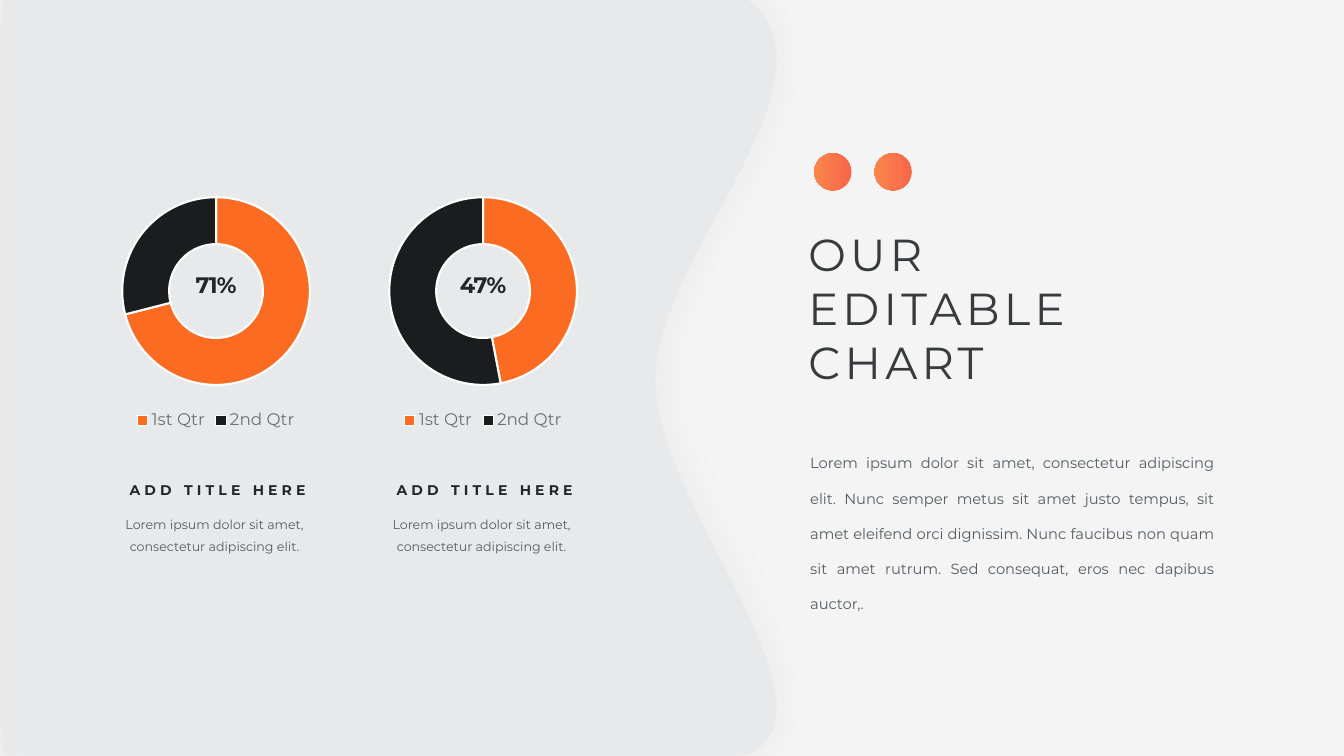
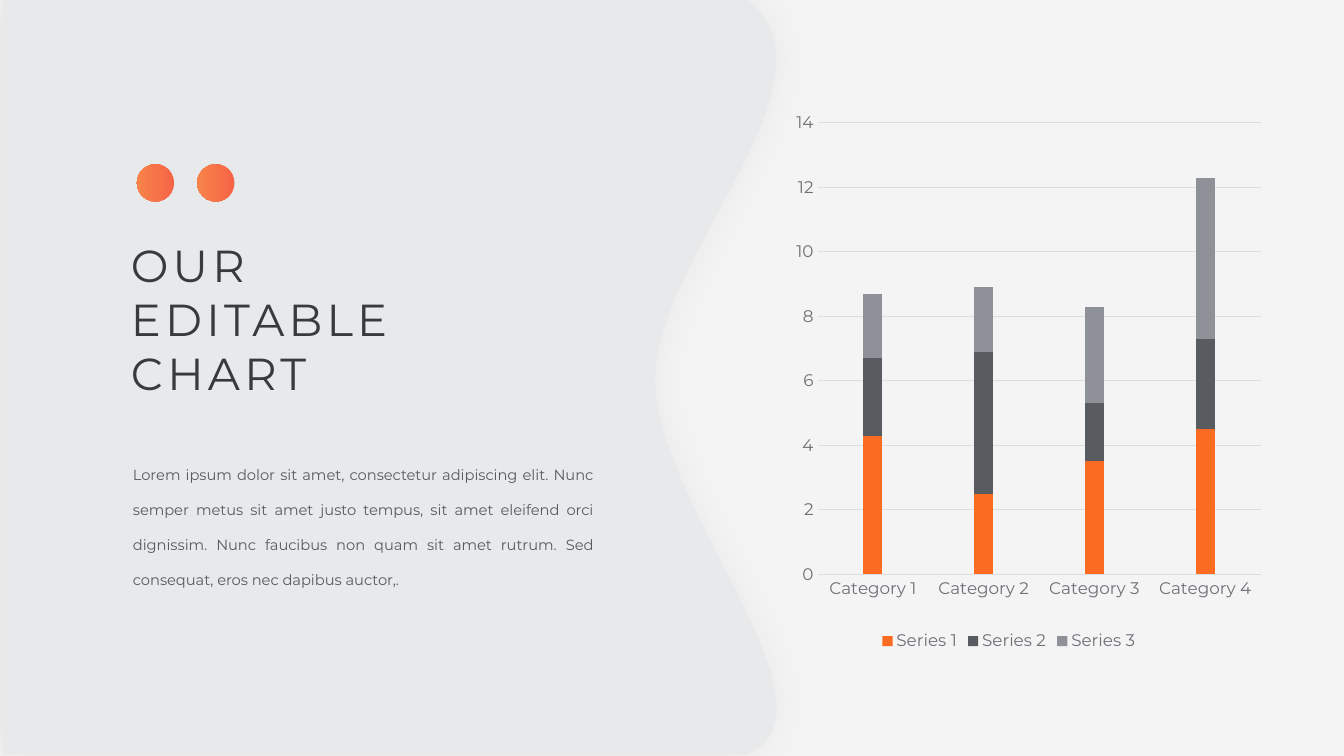
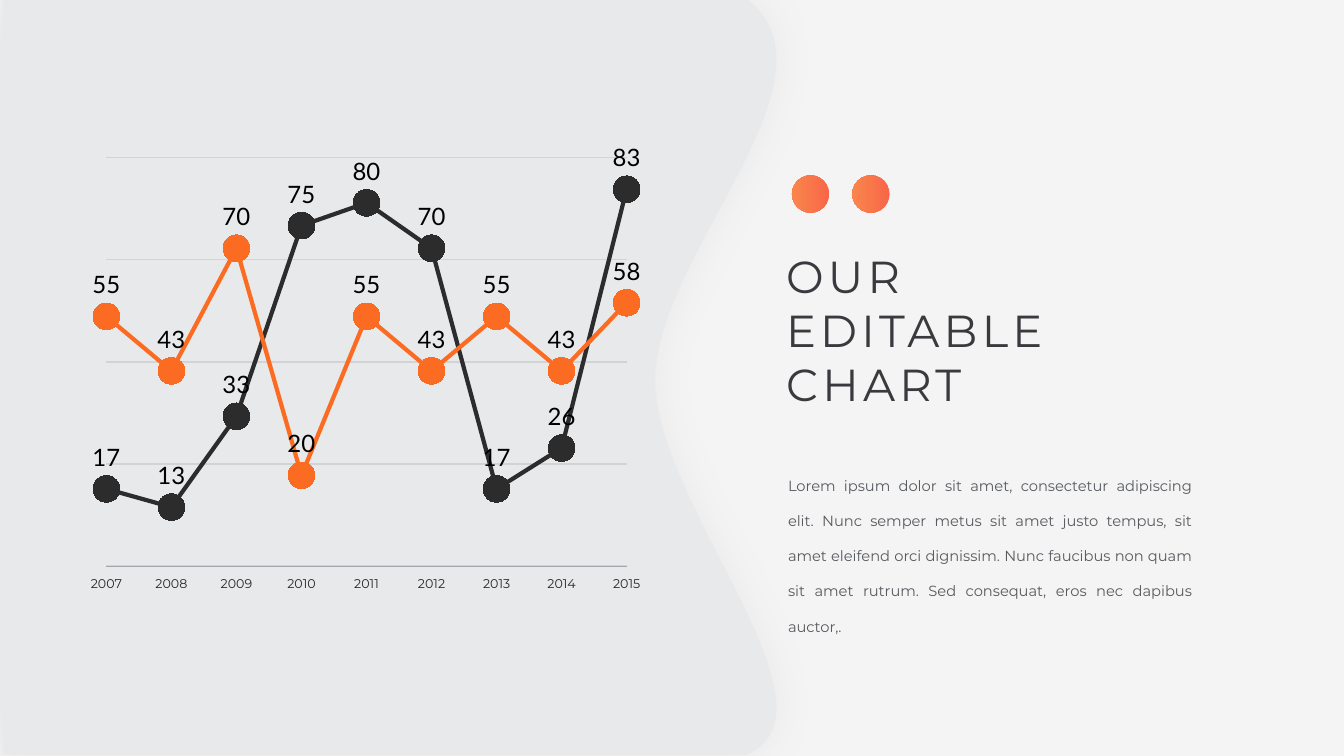
from lxml.etree import SubElement
from pptx import Presentation
from pptx.chart.data import CategoryChartData
from pptx.dml.color import RGBColor
from pptx.enum.chart import (
    XL_CHART_TYPE as ChartType,
    XL_LABEL_POSITION as LabelPosition,
    XL_LEGEND_POSITION as LegendPosition,
    XL_MARKER_STYLE as MarkerStyle,
    XL_TICK_LABEL_POSITION as TickLabelPosition,
    XL_TICK_MARK as TickMark,
)
from pptx.enum.shapes import MSO_SHAPE as Shape
from pptx.enum.text import MSO_AUTO_SIZE as AutoSize, PP_ALIGN as Align
from pptx.oxml.ns import qn
from pptx.util import Cm, Pt

COLORS = {
    "background": "F4F4F4", "wave": "E8E9EA", "shadow": "A7A7A7",
    "title": "393A3E", "body": "585B60", "dark": "242527",
    "label": "6D7076", "grid": "DDDEE0", "white": "FFFFFF",
    "orange": "FC6B22", "red": "FA431E", "black": "1B1C1D",
    "slate": "585B60", "grey": "8E9197", "charcoal": "2C2C2C",
    "line_grid": "D2D3D5", "line_axis": "A5A7AB", "value": "000000",
}
FONT = "Montserrat"

# Font, colour, paragraph format and letter spacing (hundredths of a point)
STYLES = {
    "title": (dict(size=Pt(32)), "title", {}, 300),
    "body": (dict(size=Pt(10.5)), "body",
             dict(alignment=Align.JUSTIFY, line_spacing=2.0), 0),
    "percent": (dict(size=Pt(16), bold=True), "dark",
                dict(alignment=Align.CENTER), -60),
    "heading": (dict(size=Pt(10), bold=True), "dark",
                dict(alignment=Align.CENTER), 300),
    "caption": (dict(size=Pt(9)), "body",
                dict(alignment=Align.CENTER, line_spacing=1.5), 0),
}

CAPTION = "Lorem ipsum dolor sit amet, consectetur adipiscing elit."
BODY = (CAPTION + " Nunc semper metus sit amet justo tempus, sit amet eleifend "
        "orci dignissim. Nunc faucibus non quam sit amet rutrum. Sed consequat, "
        "eros nec dapibus auctor,.")

WAVE_LEFT, WAVE_TOP, WAVE_BOTTOM = 0.08, -0.03, 19.02
WAVE_CURVES = [
    [(18.82, WAVE_TOP), (21.39, 1.98), (16.51, 6.4), (16.51, 9.58)],
    [(16.51, 9.58), (16.51, 12.75), (21.39, 17.86), (18.82, WAVE_BOTTOM)],
]
CURVE_STEPS = 40


def rgb(color):
    return RGBColor.from_string(COLORS[color])


def apply(target, values):
    for attribute, value in values.items():
        setattr(target, attribute, value)


def paint(fill, color):
    fill.solid()
    fill.fore_color.rgb = rgb(color)


def stroke(line, color, width):
    paint(line.fill, color)
    line.width = Pt(width)


def set_font(font, color, size, name=FONT):
    apply(font, dict(name=name, size=Pt(size)))
    font.color.rgb = rgb(color)


def bezier(points, t):
    weights = ((1 - t) ** 3, 3 * t * (1 - t) ** 2, 3 * t ** 2 * (1 - t), t ** 3)
    return tuple(sum(w * p[axis] for w, p in zip(weights, points)) for axis in (0, 1))


def add_wave(slide):
    edge = [bezier(curve, step / CURVE_STEPS)
            for curve in WAVE_CURVES for step in range(CURVE_STEPS + 1)]
    outline = edge + [(WAVE_LEFT, WAVE_BOTTOM)]
    builder = slide.shapes.build_freeform(Cm(WAVE_LEFT), Cm(WAVE_TOP))
    builder.add_line_segments([(Cm(x), Cm(y)) for x, y in outline], close=True)
    wave = builder.convert_to_shape()
    paint(wave.fill, "wave")
    wave.line.fill.background()
    wave.shadow.inherit = False
    effects = wave.element.spPr.find(qn("a:effectLst"))
    shadow = SubElement(effects, qn("a:outerShdw"), blurRad=str(Pt(33)),
                        dist=str(Pt(6)), dir="10800000", algn="r", rotWithShape="0")
    tint = SubElement(shadow, qn("a:srgbClr"), val=COLORS["shadow"])
    SubElement(tint, qn("a:alpha"), val="20000")


def add_text(slide, style, paragraphs, left, top, width, height, wrap=True):
    font, color, layout, spacing = STYLES[style]
    box = slide.shapes.add_textbox(Cm(left), Cm(top), Cm(width), Cm(height))
    apply(box.text_frame, dict(word_wrap=wrap, auto_size=AutoSize.SHAPE_TO_FIT_TEXT,
                               text="\n".join(paragraphs)))
    for paragraph in box.text_frame.paragraphs:
        apply(paragraph, layout)
        for run in paragraph.runs:
            apply(run.font, dict(font, name=FONT))
            run.font.color.rgb = rgb(color)
    for properties in box.element.iter(qn("a:rPr")):
        properties.set("spc", str(spacing))


def add_dot(slide, left, top):
    dot = slide.shapes.add_shape(Shape.OVAL, Cm(left), Cm(top), Cm(0.94), Cm(0.94))
    dot.shadow.inherit = False
    dot.line.fill.background()
    dot.fill.gradient()
    dot.fill.gradient_angle = 180
    for stop, color in zip(dot.fill.gradient_stops, ("red", "orange")):
        stop.color.rgb = rgb(color)
    for tint in dot.element.spPr.iter(qn("a:srgbClr")):
        SubElement(tint, qn("a:alpha"), val="80000")


def add_intro(slide, left, top, body_width):
    """Title with its two dots above and its paragraph below."""
    add_text(slide, "title", ["OUR", "EDITABLE CHART"], left, top, 11.73, 4.37)
    add_text(slide, "body", [BODY], left + 0.05, top + 5.29, body_width, 3.71)
    for index in range(2):
        add_dot(slide, left + 0.4 + index * 1.52, top - 1.73)


def add_chart(slide, kind, categories, series, left, top, width, height):
    data = CategoryChartData()
    data.categories = categories
    for number, values in enumerate(series, 1):
        data.add_series(f"Series {number}", values)
    chart = slide.shapes.add_chart(kind, Cm(left), Cm(top), Cm(width), Cm(height),
                                   data).chart
    apply(chart, dict(has_title=False, has_legend=False))
    set_font(chart.font, "dark", 10)
    return chart


def add_legend(chart):
    chart.has_legend = True
    apply(chart.legend, dict(position=LegendPosition.BOTTOM, include_in_layout=False))
    set_font(chart.legend.font, "label", 12)


def place_plot(chart, x, y, w, h):
    """Fix the inner plot area, in percent of the chart."""
    plot_area = chart.element.find(".//" + qn("c:plotArea"))
    for automatic in plot_area.findall(qn("c:layout")):
        plot_area.remove(automatic)
    layout = SubElement(plot_area, qn("c:layout"))
    plot_area.insert(0, layout)
    manual = SubElement(layout, qn("c:manualLayout"))
    settings = dict(layoutTarget="inner", xMode="edge", yMode="edge",
                    x=x / 100, y=y / 100, w=w / 100, h=h / 100)
    for tag, value in settings.items():
        SubElement(manual, qn("c:" + tag), val=str(value))


def style_axes(chart, axis_line, grid_line, label_color, label_size):
    ticks = dict(major_tick_mark=TickMark.NONE, minor_tick_mark=TickMark.NONE)
    for axis in (chart.category_axis, chart.value_axis):
        apply(axis, ticks)
        set_font(axis.tick_labels.font, label_color, label_size)
    stroke(chart.category_axis.format.line, *axis_line)
    chart.value_axis.format.line.fill.background()
    chart.value_axis.has_major_gridlines = True
    stroke(chart.value_axis.major_gridlines.format.line, *grid_line)


def start_on_axis(chart):
    """Put the first and last category on the edges of the plot area."""
    axis = chart.element.find(".//" + qn("c:valAx"))
    for crossing in axis.findall(qn("c:crossBetween")):
        axis.remove(crossing)
    crossing = SubElement(axis, qn("c:crossBetween"), val="midCat")
    axis.find(qn("c:crosses")).addnext(crossing)


def add_gauge(slide, left, share):
    """Doughnut with its percentage, heading and caption."""
    top, width = 4.62, 6.17
    center = left + width / 2
    chart = add_chart(slide, ChartType.DOUGHNUT, ["1st Qtr", "2nd Qtr"],
                      [(share, 100 - share)], left, top, width, 6.32)
    add_legend(chart)
    plot = chart.plots[0]
    plot.vary_by_categories = True
    chart.element.find(".//" + qn("c:holeSize")).set("val", "85")
    for index, color in enumerate(("orange", "black")):
        sector = plot.series[0].points[index].format
        paint(sector.fill, color)
        stroke(sector.line, "white", 1.5)
    add_text(slide, "percent", [f"{share}%"], center - 1.2, 6.71, 2.4, 0.94, wrap=False)
    add_text(slide, "heading", ["ADD TITLE HERE"], center - 2.46, 12, 5, 0.69, wrap=False)
    add_text(slide, "caption", [CAPTION], center - 2.87, 12.7, 5.66, 1.35)


def add_stacked_columns(slide):
    chart = add_chart(slide, ChartType.COLUMN_STACKED,
                      [f"Category {number}" for number in range(1, 5)],
                      [(4.3, 2.5, 3.5, 4.5), (2.4, 4.4, 1.8, 2.8), (2, 2, 3, 5)],
                      19.08, 2.57, 12.7, 13.94)
    add_legend(chart)
    place_plot(chart, 12, 3.8, 88, 81.6)
    style_axes(chart, ("grid", 0.75), ("grid", 0.75), "label", 12)
    apply(chart.value_axis, dict(minimum_scale=0, maximum_scale=14, major_unit=2))
    plot = chart.plots[0]
    apply(plot, dict(gap_width=481, overlap=100, vary_by_categories=False))
    for series, color in zip(plot.series, ("orange", "slate", "grey")):
        paint(series.format.fill, color)


def add_trend_lines(slide):
    chart = add_chart(slide, ChartType.LINE_MARKERS,
                      [str(year) for year in range(2007, 2016)],
                      [(17, 13, 33, 75, 80, 70, 17, 26, 83),
                       (55, 43, 70, 20, 55, 43, 55, 43, 58)],
                      2.08, 2.36, 14.33, 14.63)
    place_plot(chart, 4.2, 11, 91.5, 70.4)
    style_axes(chart, ("line_axis", 0.25), ("line_grid", 1), "dark", 9)
    start_on_axis(chart)
    chart.category_axis.tick_label_position = TickLabelPosition.LOW
    apply(chart.value_axis, dict(visible=False, minimum_scale=0, maximum_scale=90,
                                 major_unit=22.5))
    plot = chart.plots[0]
    plot.vary_by_categories = False
    for series, color in zip(plot.series, ("charcoal", "orange")):
        series.smooth = False
        stroke(series.format.line, color, 3)
        apply(series.marker, dict(style=MarkerStyle.CIRCLE, size=19))
        paint(series.marker.format.fill, color)
        series.marker.format.line.fill.background()
        labels = series.data_labels
        apply(labels, dict(show_value=True, position=LabelPosition.ABOVE))
        set_font(labels.font, "value", 17.1, "Lato")


def add_base_slide(deck):
    slide = deck.slides.add_slide(deck.slide_layouts[6])
    paint(slide.background.fill, "background")
    add_wave(slide)
    return slide


def main():
    deck = Presentation()
    apply(deck, dict(slide_width=Cm(33.87), slide_height=Cm(19.05)))

    gauges = add_base_slide(deck)
    for index, share in enumerate((71, 47)):
        add_gauge(gauges, 2.36 + index * 6.73, share)
    add_intro(gauges, 20.12, 5.59, 10.69)

    columns = add_base_slide(deck)
    add_stacked_columns(columns)
    add_intro(columns, 3.05, 5.87, 12.12)

    trends = add_base_slide(deck)
    add_trend_lines(trends)
    add_intro(trends, 19.56, 6.15, 10.69)

    deck.save("out.pptx")


if __name__ == "__main__":
    main()
